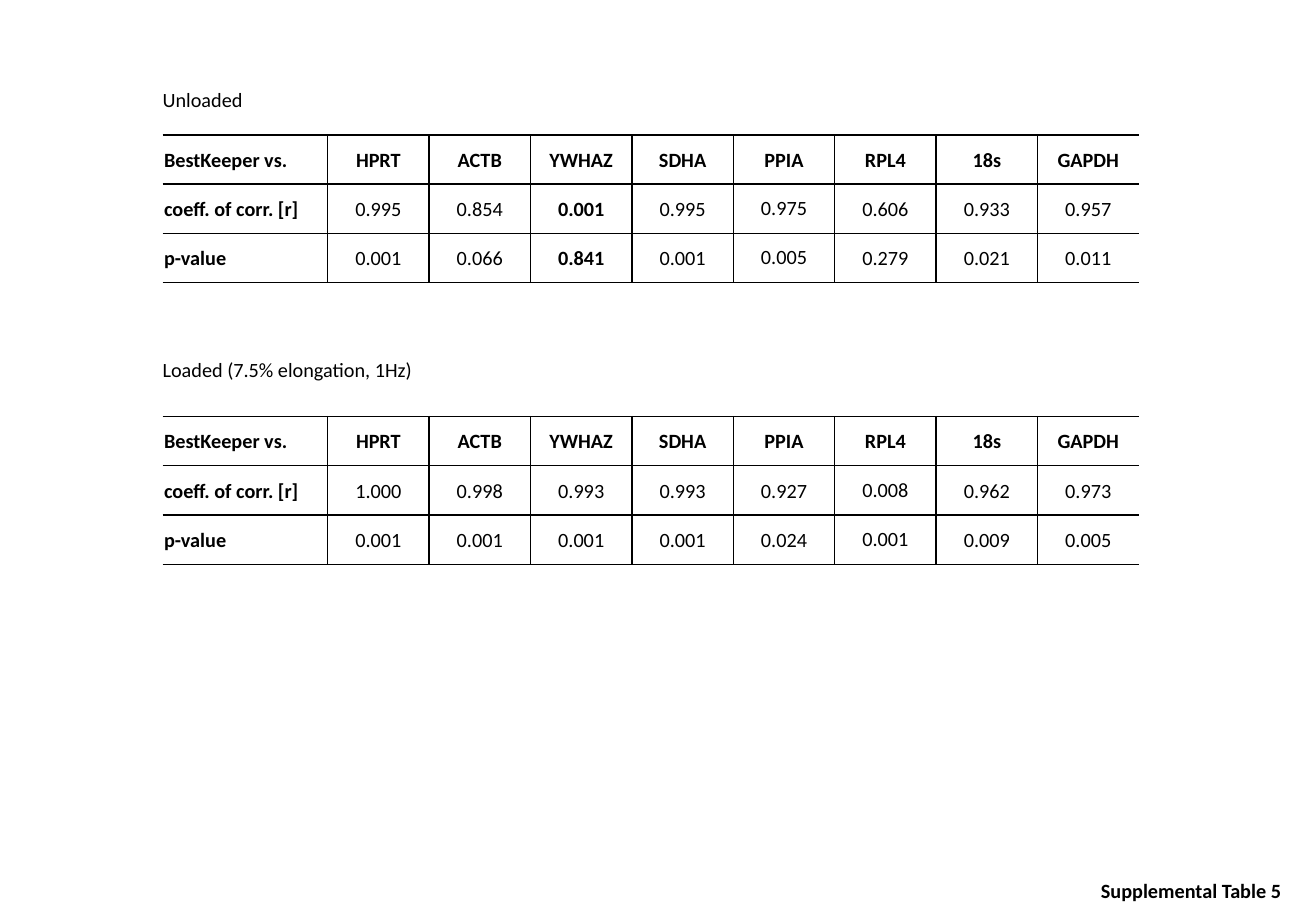
from lxml import etree
from pptx import Presentation
from pptx import util as u
from pptx.dml.color import RGBColor
from pptx.enum import text
from pptx.oxml import ns

BLACK = RGBColor(0x00, 0x00, 0x00)
GENES = ["HPRT", "ACTB", "YWHAZ", "SDHA", "PPIA", "RPL4", "18s", "GAPDH"]
CONDITIONS = [
    dict(
        condition="Unloaded", caption_top=1.7, caption_width=4.78, table_top=2.82,
        coefficients="0.995 0.854 0.001 0.995 0.975 0.606 0.933 0.957",
        p_values="0.001 0.066 0.841 0.001 0.005 0.279 0.021 0.011",
        bold_gene="YWHAZ", single_spaced="PPIA",
    ),
    dict(
        condition="Loaded (7.5% elongation, 1Hz)", caption_top=7.34,
        caption_width=8.94, table_top=8.71,
        coefficients="1.000 0.998 0.993 0.993 0.927 0.008 0.962 0.973",
        p_values="0.001 0.001 0.001 0.001 0.024 0.001 0.009 0.005",
        bold_gene=None, single_spaced="RPL4",
    ),
]


def assign(target, values):
    """Set each attribute named in values on the target."""
    for name, value in values.items():
        setattr(target, name, value)


class SlideBuilder:
    """Hold the text style and the current slide, and add its elements."""

    FONT = {"name": "Calibri", "size": u.Pt(12)}
    FRAME = {"word_wrap": True, "vertical_anchor": text.MSO_ANCHOR.TOP,
             "auto_size": text.MSO_AUTO_SIZE.NONE}
    CELL = {"vertical_anchor": text.MSO_ANCHOR.MIDDLE,
            **{f"margin_{side}": u.Cm(0.03)
               for side in ("left", "right", "top", "bottom")}}
    LABEL_WIDTH, GENE_WIDTH, ROW_HEIGHT = u.Cm(3.45), u.Cm(2.12), u.Cm(1.03)

    def __init__(self, presentation):
        """Start a title-only slide."""
        self.slide = presentation.slides.add_slide(presentation.slide_layouts[5])

    def wording(self, paragraph, words, bold=False, **layout):
        """Put styled words into a paragraph."""
        run = paragraph.add_run()
        run.text = words
        assign(run.font, {**self.FONT, "bold": bold})
        run.font.color.rgb = BLACK
        assign(paragraph, layout)

    def title(self, words, left, top, width):
        """Place and format the slide title."""
        title = self.slide.shapes.title
        assign(title, {"left": u.Cm(left), "top": u.Cm(top),
                       "width": u.Cm(width), "height": u.Cm(0.77)})
        assign(title.text_frame, self.FRAME)
        self.wording(title.text_frame.paragraphs[0], words, bold=True,
                     alignment=text.PP_ALIGN.LEFT)

    def caption(self, words, left, top, width):
        """Add a one-line caption."""
        caption = self.slide.shapes.add_textbox(
            u.Cm(left), u.Cm(top), u.Cm(width), u.Cm(0.77))
        assign(caption.text_frame, self.FRAME)
        self.wording(caption.text_frame.paragraphs[0], words)

    def borders(self, cell, visible):
        """Rule the visible sides of a cell and clear the others."""
        properties = cell._tc.get_or_add_tcPr()
        for index, side in enumerate("LRTB"):
            rule = etree.Element(ns.qn(f"a:ln{side}"), w=str(u.Pt(1)))
            if side in visible:
                fill = etree.SubElement(rule, ns.qn("a:solidFill"))
                etree.SubElement(fill, ns.qn("a:srgbClr"), val=str(BLACK))
            else:
                etree.SubElement(rule, ns.qn("a:noFill"))
            properties.insert(index, rule)

    def table(self, rows, left, top, bold_column, single_column):
        """Add a ruled table that is open at its left and right edges."""
        last = len(rows[0]) - 1
        table = self.slide.shapes.add_table(
            len(rows), last + 1, u.Cm(left), u.Cm(top),
            self.LABEL_WIDTH + last * self.GENE_WIDTH,
            len(rows) * self.ROW_HEIGHT).table
        assign(table, {"first_row": False, "horz_banding": False})
        for c, column in enumerate(table.columns):
            column.width = self.GENE_WIDTH if c else self.LABEL_WIDTH
        for r, row in enumerate(rows):
            for c, words in enumerate(row):
                cell = table.cell(r, c)
                assign(cell, self.CELL)
                cell.fill.background()
                self.borders(cell, "TB" + "L" * (c > 0) + "R" * (c < last))
                self.wording(
                    cell.text_frame.paragraphs[0], words,
                    bold=r == 0 or c in (0, bold_column),
                    alignment=text.PP_ALIGN.CENTER if c else text.PP_ALIGN.LEFT,
                    line_spacing=1.0 if r and c == single_column else 1.07)


def main():
    """Build and save the slide."""
    presentation = Presentation()
    assign(presentation, {"slide_width": u.Cm(27.51), "slide_height": u.Cm(19.05)})
    builder = SlideBuilder(presentation)
    header = ["BestKeeper vs.", *GENES]
    for result in CONDITIONS:
        builder.caption(result["condition"], 3.15, result["caption_top"],
                        result["caption_width"])
        rows = [header,
                ["coeff. of corr. [r]", *result["coefficients"].split()],
                ["p-value", *result["p_values"].split()]]
        bold_gene = result["bold_gene"]
        builder.table(rows, 3.4, result["table_top"],
                      header.index(bold_gene) if bold_gene else None,
                      header.index(result["single_spaced"]))
    builder.title("Supplemental Table 5", 22.76, 18.24, 4.65)
    presentation.save("out.pptx")


if __name__ == "__main__":
    main()
